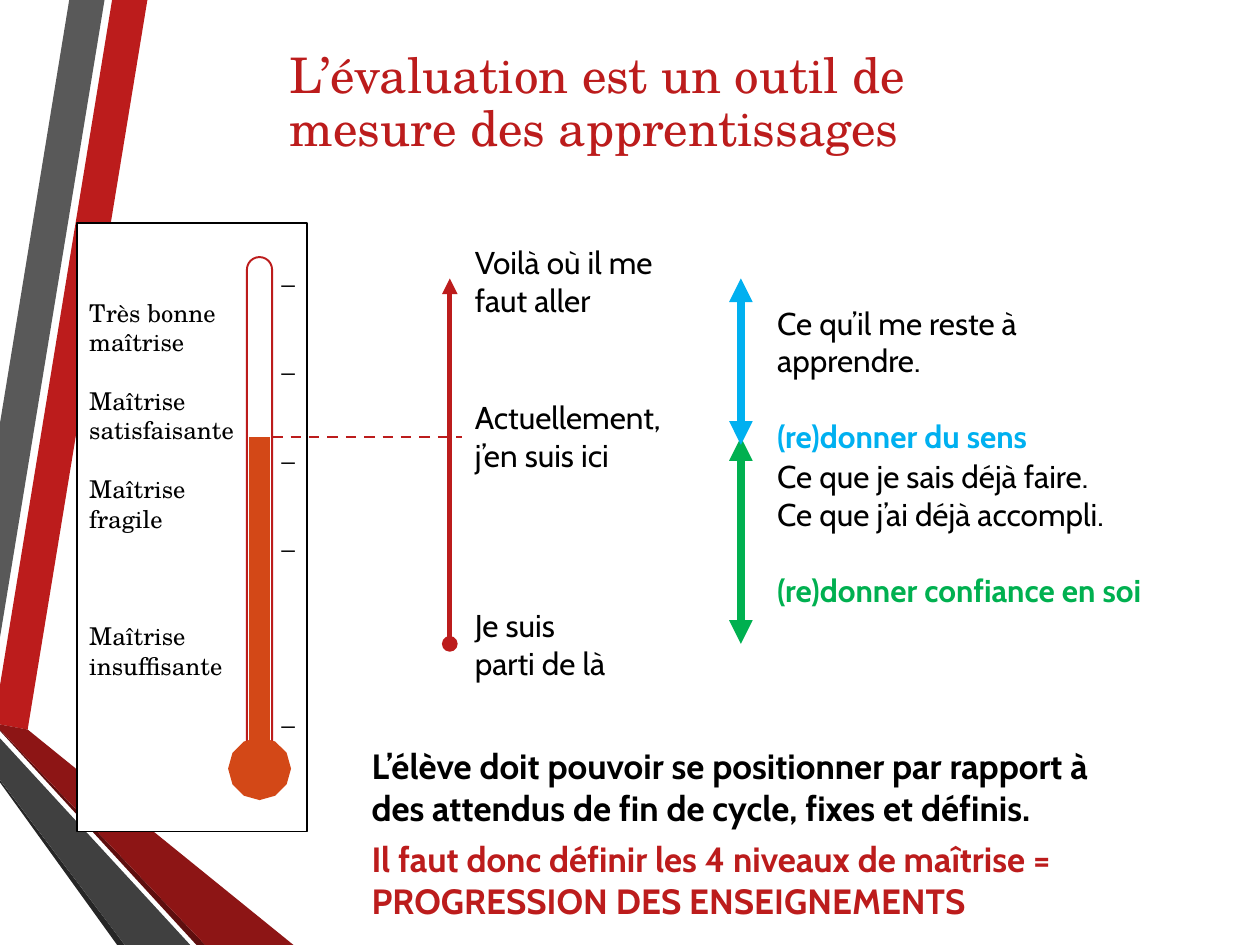
from copy import deepcopy
from dataclasses import dataclass

from pptx import Presentation
from pptx.dml.color import RGBColor
from pptx.enum.dml import MSO_LINE
from pptx.enum.shapes import MSO_CONNECTOR, MSO_SHAPE
from pptx.enum.text import MSO_ANCHOR, MSO_AUTO_SIZE, PP_ALIGN
from pptx.oxml.ns import qn
from pptx.util import Pt

LEFT, RIGHT = PP_ALIGN.LEFT, PP_ALIGN.RIGHT
BOTTOM = MSO_ANCHOR.BOTTOM
FIT, FIXED = MSO_AUTO_SIZE.SHAPE_TO_FIT_TEXT, MSO_AUTO_SIZE.NONE
DASH = MSO_LINE.DASH
RECT, ROUND = MSO_SHAPE.RECTANGLE, MSO_SHAPE.ROUNDED_RECTANGLE
STRAIGHT = MSO_CONNECTOR.STRAIGHT

PX = 9144  # 100 px to the inch
SERIF, SANS = "TeX Gyre Schola", "Cabin"
COLORS = {
    "red": "BC1C1C", "grey": "595959", "coal": "262626", "wine": "5E0E0E",
    "brick": "8D1515", "dark": "404040", "black": "000000",
    "white": "FFFFFF", "heat": "D34817", "green": "00B050", "blue": "00B0F0",
}


@dataclass
class Band:
    color: str
    points: list[tuple[int, int]]


@dataclass
class Para:
    text: str
    color: str = "black"
    bold: bool = False
    align: PP_ALIGN = LEFT
    before: float = 0


@dataclass
class Note:
    box: tuple[int, int, int, int]
    paras: list[Para]
    size: int = 18
    font: str = SANS


@dataclass
class Arrow:
    start: tuple[int, int]
    end: tuple[int, int]
    color: str
    width: float
    head: str = ""
    tail: str = ""
    dash: MSO_LINE | None = None


BANDS = [
    Band("red", [(0, 544), (0, 575), (22, 579), (117, 0), (89, 0)]),
    Band("grey", [(83, 0), (55, 0), (0, 336), (0, 506)]),
    Band("coal", [(0, 619), (0, 621), (93, 750), (99, 750)]),
    Band("wine", [(0, 579), (0, 580), (156, 750), (163, 750)]),
    Band("brick", [(0, 579), (163, 750), (233, 750), (22, 579), (0, 575)]),
    Band("dark", [(0, 619), (99, 750), (151, 750), (0, 586)]),
]

ROW, GAP = 16.8, 21.8  # one line of the scale, one line of a note, in points


def tick(before: float = 0) -> Para:
    return Para("–", align=RIGHT, before=before)


SCALE = Note((61, 208, 183, 387), [
    tick(), Para("Très bonne\nmaîtrise"),
    tick(), Para("Maîtrise\nsatisfaisante"),
    tick(), Para("Maîtrise\nfragile"),
    tick(), Para("Maîtrise\ninsuffisante", before=2 * ROW),
    tick(ROW),
], 14, SERIF)

NOTES = [
    Note((367, 476, 135, 71), [Para("Je suis parti de là")]),
    Note((367, 311, 177, 71), [Para("Actuellement, j’en suis ici")]),
    Note((367, 188, 177, 71), [Para("Voilà où il me faut aller")]),
    Note((607, 358, 327, 131), [
        Para("Ce que je sais déjà faire."),
        Para("Ce que j’ai déjà accompli."),
        Para("(re)donner confiance en soi", "green", True, before=GAP)]),
    Note((607, 236, 327, 101), [
        Para("Ce qu’il me reste à apprendre."),
        Para("(re)donner du sens", "blue", True, before=GAP)]),
    Note((285, 586, 592, 77), [
        Para("L’élève doit pouvoir se positionner par rapport à des attendus "
             "de fin de cycle, fixes et définis.", bold=True)], 20),
    Note((285, 660, 715, 77), [
        Para("Il faut donc définir les 4 niveaux de maîtrise = "
             "PROGRESSION DES ENSEIGNEMENTS", "red", True)], 20),
]

TOP, LEVEL, BASE = 221, 347, 511
ARROWS = [
    Arrow((206, 610), (206, LEVEL), "heat", 12, "oval"),
    Arrow((357, BASE), (357, TOP), "red", 3, "oval", "triangle"),
    Arrow((216, LEVEL), (367, LEVEL), "red", 1.5, dash=DASH),
    Arrow((588, BASE), (588, LEVEL), "green", 4.5, "triangle", "triangle"),
    Arrow((588, 353), (588, TOP), "blue", 4.5, "triangle", "triangle"),
]


def rgb(name: str) -> RGBColor:
    return RGBColor.from_string(COLORS[name])


def emu(values) -> list[int]:
    return [v * PX for v in values]


def apply(target, values: dict) -> None:
    for key, value in values.items():
        setattr(target, key, value)


def write(frame, note: Note, spacing: float = 1.0) -> None:
    for i, item in enumerate(note.paras):
        para = frame.paragraphs[0] if i == 0 else frame.add_paragraph()
        para.text = item.text
        apply(para, {"alignment": item.align, "line_spacing": spacing,
                     "space_before": Pt(item.before), "space_after": Pt(0)})
        for run in para.runs:
            apply(run.font, {"name": note.font, "size": Pt(note.size),
                             "bold": item.bold})
            run.font.color.rgb = rgb(item.color)
        # A line break takes the format of the text around it
        for brk in para._p.findall(qn("a:br")):
            brk.append(deepcopy(para.runs[0].font._element))


def add_note(shapes, note: Note) -> None:
    frame = shapes.add_textbox(*emu(note.box)).text_frame
    apply(frame, {"word_wrap": True, "auto_size": FIT})
    write(frame, note)


def add_title(shape) -> None:
    box = (220, 30, 734, 100)
    apply(shape, dict(zip(("left", "top", "width", "height"), emu(box))))
    frame = shape.text_frame
    apply(frame, {"word_wrap": True, "auto_size": FIXED,
                  "vertical_anchor": BOTTOM})
    lines = ("L’évaluation est un outil de", "mesure des apprentissages")
    write(frame, Note(box, [Para(t, "red") for t in lines], 28, SERIF), 0.9)


def add_band(shapes, band: Band) -> None:
    pen = shapes.build_freeform(*band.points[0], scale=PX)
    pen.add_line_segments(band.points[1:], close=True)
    shape = pen.convert_to_shape()
    shape.shadow.inherit = False
    shape.fill.solid()
    shape.fill.fore_color.rgb = rgb(band.color)
    shape.line.fill.background()


def add_frame(shapes, kind: MSO_SHAPE, box, line: str, fill: str = ""):
    shape = shapes.add_shape(kind, *emu(box))
    shape.shadow.inherit = False
    if fill:
        shape.fill.solid()
        shape.fill.fore_color.rgb = rgb(fill)
    else:
        shape.fill.background()
    shape.line.color.rgb = rgb(line)
    shape.line.width = Pt(1.1)
    return shape


def add_arrow(shapes, arrow: Arrow) -> None:
    link = shapes.add_connector(STRAIGHT, *emu(arrow.start + arrow.end))
    link.line.color.rgb = rgb(arrow.color)
    apply(link.line, {"width": Pt(arrow.width), "dash_style": arrow.dash})
    props = link._element.spPr
    line = props.find(qn("a:ln"))
    for tag, kind in (("a:headEnd", arrow.head), ("a:tailEnd", arrow.tail)):
        if kind:
            line.makeelement(qn(tag))
            end = line.makeelement(qn(tag), {"type": kind})
            line.append(end)
    props.append(props.makeelement(qn("a:effectLst")))


def main() -> None:
    deck = Presentation()
    apply(deck, {"slide_width": 1000 * PX, "slide_height": 750 * PX})
    shapes = deck.slides.add_slide(deck.slide_layouts[5]).shapes

    # Side bands and title
    for band in BANDS:
        add_band(shapes, band)
    add_title(shapes.title)

    # Thermometer with its scale
    add_frame(shapes, RECT, (61, 177, 183, 483), "black", "white")
    tube = add_frame(shapes, ROUND, (196, 204, 20, 422), "red")
    tube.adjustments[0] = 0.5
    add_note(shapes, SCALE)

    # Arrows and notes
    for arrow in ARROWS:
        add_arrow(shapes, arrow)
    for note in NOTES:
        add_note(shapes, note)

    deck.save("out.pptx")


if __name__ == "__main__":
    main()
